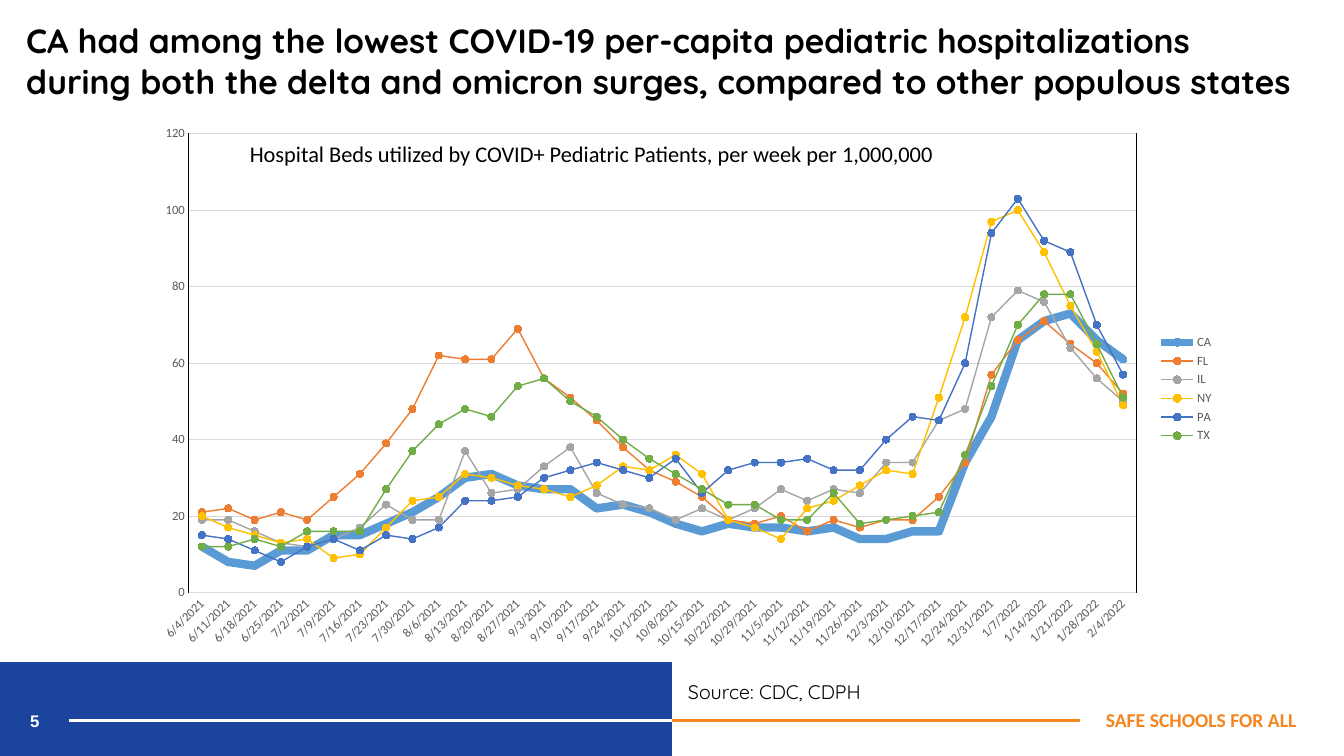
from lxml.etree import SubElement
from pptx import Presentation
from pptx.chart.data import CategoryChartData
from pptx.dml.color import RGBColor
from pptx.enum.chart import XL_CHART_TYPE, XL_LEGEND_POSITION, XL_MARKER_STYLE, XL_TICK_MARK
from pptx.enum.shapes import MSO_CONNECTOR, MSO_SHAPE
from pptx.enum.text import MSO_ANCHOR, MSO_AUTO_SIZE, PP_ALIGN
from pptx.oxml import parse_xml
from pptx.oxml.ns import nsdecls, qn
from pptx.util import Inches, Pt

BLACK = RGBColor(0x00, 0x00, 0x00)
WHITE = RGBColor(0xFF, 0xFF, 0xFF)
NAVY = RGBColor(0x1A, 0x44, 0x9D)
ORANGE = RGBColor(0xF6, 0x85, 0x1F)
GRAY = RGBColor(0x59, 0x59, 0x59)
PALE = RGBColor(0xD9, 0xD9, 0xD9)

WEEKS = """6/4/2021 6/11/2021 6/18/2021 6/25/2021 7/2/2021 7/9/2021 7/16/2021 7/23/2021
7/30/2021 8/6/2021 8/13/2021 8/20/2021 8/27/2021 9/3/2021 9/10/2021 9/17/2021 9/24/2021
10/1/2021 10/8/2021 10/15/2021 10/22/2021 10/29/2021 11/5/2021 11/12/2021 11/19/2021
11/26/2021 12/3/2021 12/10/2021 12/17/2021 12/24/2021 12/31/2021 1/7/2022 1/14/2022
1/21/2022 1/28/2022 2/4/2022""".split()

STATES = [
    ("CA", RGBColor(0x5B, 0x9B, 0xD5), 6,
     [12, 8, 7, 11, 11, 15, 15, 18, 21, 25, 30, 31, 28, 27, 27, 22, 23, 21,
      18, 16, 18, 17, 17, 16, 17, 14, 14, 16, 16, 34, 46, 66, 71, 73, 66, 61]),
    ("FL", RGBColor(0xED, 0x7D, 0x31), 1,
     [21, 22, 19, 21, 19, 25, 31, 39, 48, 62, 61, 61, 69, 56, 51, 45, 38, 32,
      29, 25, 19, 18, 20, 16, 19, 17, 19, 19, 25, 34, 57, 66, 71, 65, 60, 52]),
    ("IL", RGBColor(0xA5, 0xA5, 0xA5), 1,
     [19, 19, 16, 13, 12, 14, 17, 23, 19, 19, 37, 26, 27, 33, 38, 26, 23, 22,
      19, 22, 19, 22, 27, 24, 27, 26, 34, 34, 45, 48, 72, 79, 76, 64, 56, 50]),
    ("NY", RGBColor(0xFF, 0xC0, 0x00), 1,
     [20, 17, 15, 13, 14, 9, 10, 17, 24, 25, 31, 30, 28, 27, 25, 28, 33, 32,
      36, 31, 19, 17, 14, 22, 24, 28, 32, 31, 51, 72, 97, 100, 89, 75, 63, 49]),
    ("PA", RGBColor(0x44, 0x72, 0xC4), 1,
     [15, 14, 11, 8, 12, 14, 11, 15, 14, 17, 24, 24, 25, 30, 32, 34, 32, 30,
      35, 26, 32, 34, 34, 35, 32, 32, 40, 46, 45, 60, 94, 103, 92, 89, 70, 57]),
    ("TX", RGBColor(0x70, 0xAD, 0x47), 1,
     [12, 12, 14, 12, 16, 16, 16, 27, 37, 44, 48, 46, 54, 56, 50, 46, 40, 35,
      31, 27, 23, 23, 19, 19, 26, 18, 19, 20, 21, 36, 54, 70, 78, 78, 65, 51]),
]


def add_text(slide, box, words, size, face, color, bold=False, align=PP_ALIGN.LEFT, grow=True):
    """Place one wrapped line of text in a box."""
    frame = slide.shapes.add_textbox(*map(Inches, box)).text_frame
    frame.word_wrap = True
    if grow:
        frame.auto_size = MSO_AUTO_SIZE.SHAPE_TO_FIT_TEXT
    else:
        frame.vertical_anchor = MSO_ANCHOR.MIDDLE
    para = frame.paragraphs[0]
    para.alignment = align
    run = para.add_run()
    run.text = words
    set_font(run.font, size, color, face)
    run.font.bold = bold


def set_font(font, size, color, face="Calibri"):
    """Set size, colour and face of a font."""
    font.size, font.name = Pt(size), face
    font.color.rgb = color


def set_line(line, color, width):
    """Set colour and width of a line."""
    line.color.rgb = color
    line.width = Pt(width)


def add_rule(slide, start, end, y, color):
    """Draw a flat rule from start to end."""
    rule = slide.shapes.add_connector(
        MSO_CONNECTOR.STRAIGHT, Inches(start), Inches(y), Inches(end), Inches(y))
    set_line(rule.line, color, 2.25)
    SubElement(rule._element.spPr, qn("a:effectLst"))


def frame_plot(chart, x, y, w, h):
    """Fix the inner plot box and give it a black border."""
    plot = chart._chartSpace.chart.plotArea
    for old in plot.findall(qn("c:layout")):
        plot.remove(old)
    spots = "".join(f'<c:{k} val="{v}"/>' for k, v in zip("xywh", (x, y, w, h)))
    plot.insert(0, parse_xml(
        f'<c:layout {nsdecls("c")}><c:manualLayout><c:layoutTarget val="inner"/>'
        f'<c:xMode val="edge"/><c:yMode val="edge"/>{spots}</c:manualLayout></c:layout>'))
    plot.append(parse_xml(
        f'<c:spPr {nsdecls("c", "a")}><a:noFill/><a:ln w="9525"><a:solidFill>'
        f'<a:srgbClr val="{BLACK}"/></a:solidFill></a:ln></c:spPr>'))


def add_trend(slide, left, top, width, height):
    """Draw the weekly chart of beds by state with its caption."""
    data = CategoryChartData()
    data.categories = WEEKS
    for name, _, _, beds in STATES:
        data.add_series(name, beds)
    chart = slide.shapes.add_chart(
        XL_CHART_TYPE.LINE_MARKERS, *map(Inches, (left, top, width, height)), data).chart
    set_font(chart.font, 10, BLACK)
    chart.has_title = False
    chart.has_legend = True
    chart.legend.position = XL_LEGEND_POSITION.RIGHT
    chart.legend.include_in_layout = False
    set_font(chart.legend.font, 9, GRAY)
    chart.plots[0].vary_by_categories = False
    for line, (_, color, weight, _) in zip(chart.plots[0].series, STATES):
        line.smooth = False
        set_line(line.format.line, color, weight)
        mark = line.marker
        mark.style, mark.size = XL_MARKER_STYLE.CIRCLE, 5
        mark.format.fill.solid()
        mark.format.fill.fore_color.rgb = color
        set_line(mark.format.line, color, 0.75)
    for axis in (chart.category_axis, chart.value_axis):
        axis.major_tick_mark = axis.minor_tick_mark = XL_TICK_MARK.NONE
        set_font(axis.tick_labels.font, 9, GRAY)
    set_line(chart.category_axis.format.line, PALE, 0.75)
    chart.category_axis._element.txPr.bodyPr.set("rot", "-2700000")
    beds = chart.value_axis
    beds.minimum_scale, beds.maximum_scale, beds.major_unit = 0, 120, 20
    beds.format.line.fill.background()
    set_line(beds.major_gridlines.format.line, PALE, 0.75)
    frame_plot(chart, 0.044, 0.031, 0.875, 0.843)
    add_text(slide, (left + 0.98, top + 0.18, 7.06, 0.37),
             "Hospital Beds utilized by COVID+ Pediatric Patients, per week per 1,000,000",
             16, "Calibri", BLACK)


def add_foot(slide, left, top, width, height):
    """Draw the blue band, rules, page number, source and slogan."""
    mid = left + width / 2
    band = slide.shapes.add_shape(
        MSO_SHAPE.RECTANGLE, *map(Inches, (left, top, width / 2, height)))
    band.shadow.inherit = False
    band.fill.solid()
    band.fill.fore_color.rgb = NAVY
    band.line.fill.background()
    add_text(slide, (left + 0.2, top + 0.38, 0.95, 0.4), "5", 12, "Arial", WHITE, True, grow=False)
    add_rule(slide, left + 0.68, mid, top + 0.58, WHITE)
    add_text(slide, (left + 10.11, top + 0.4, 2.85, 0.34), "SAFE SCHOOLS FOR ALL",
             14, "Calibri", ORANGE, True, PP_ALIGN.RIGHT)
    add_rule(slide, mid, left + 10.71, top + 0.58, ORANGE)
    add_text(slide, (mid + 0.06, top + 0.13, 2.49, 0.34), "Source: CDC, CDPH",
             14, "Quicksand", BLACK)


def main():
    """Build the slide and save it."""
    deck = Presentation()
    deck.slide_width, deck.slide_height = Inches(13.33), Inches(7.5)
    slide = deck.slides.add_slide(deck.slide_layouts[6])
    add_trend(slide, 1.4, 1.16, 10.74, 5.4)
    add_text(slide, (0.16, 0.15, 12.84, 0.91),
             "CA had among the lowest COVID-19 per-capita pediatric hospitalizations "
             "during both the delta and omicron surges, compared to other populous states",
             24, "Quicksand", BLACK, True)
    add_foot(slide, 0, 6.57, 13.33, 0.93)
    deck.save("out.pptx")


if __name__ == "__main__":
    main()
